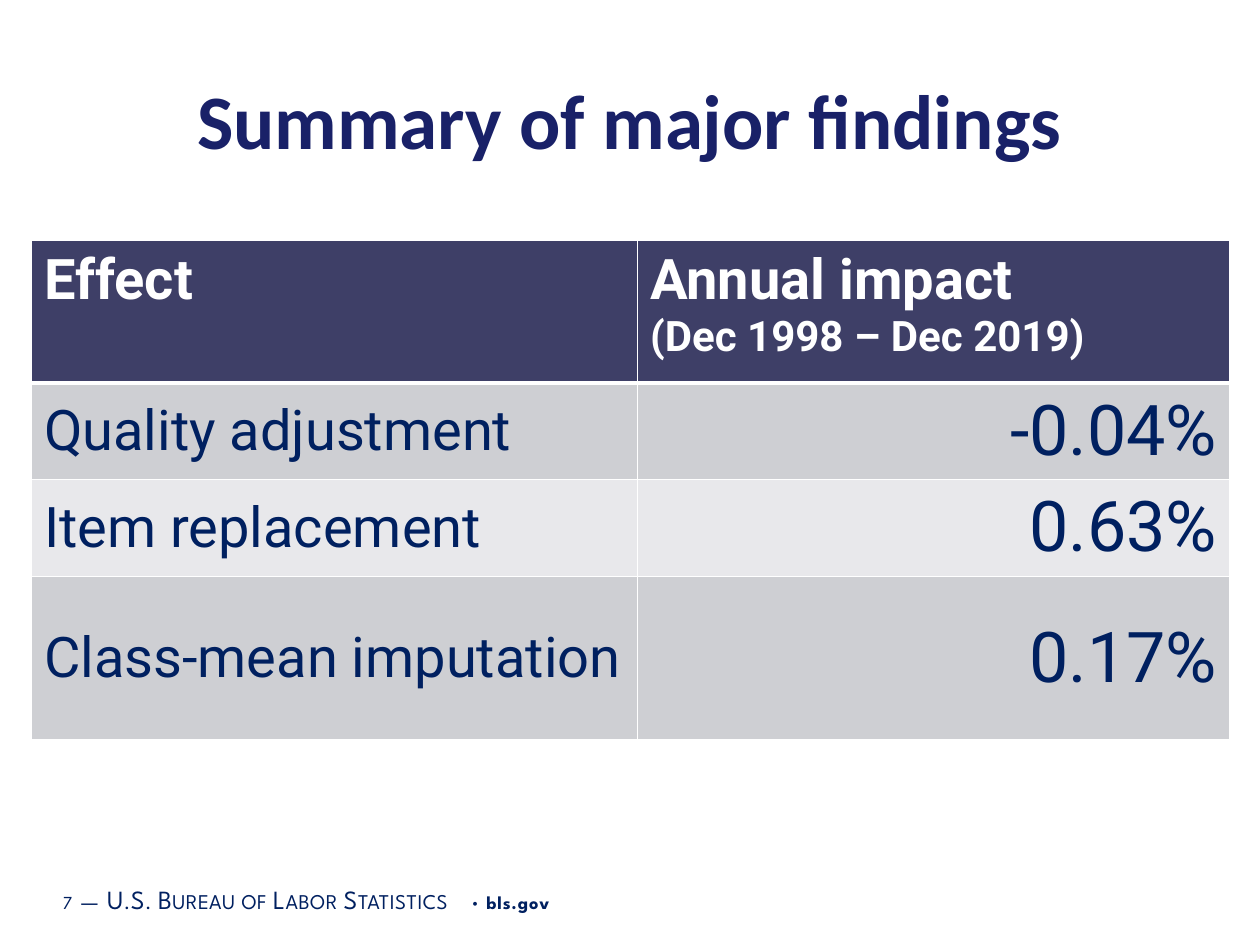
"""Build the slide that summarises the major findings."""
from lxml import etree
from pptx import Presentation
from pptx.dml.color import RGBColor
from pptx.enum.text import MSO_ANCHOR, PP_ALIGN
from pptx.oxml.ns import qn
from pptx.util import Inches, Pt

MIDDLE, TOP = MSO_ANCHOR.MIDDLE, MSO_ANCHOR.TOP
LEFT, CENTER, RIGHT = PP_ALIGN.LEFT, PP_ALIGN.CENTER, PP_ALIGN.RIGHT
COLORS = {
    "title": "192168",
    "text": "002060",
    "header": "3E3F67",
    "band_dark": "CECFD3",
    "band_light": "E8E8EB",
    "white": "FFFFFF",
}
FINDINGS = [
    ("Quality adjustment", "-0.04%", 0.7),
    ("Item replacement", "0.63%", 0.7),
    ("Class-mean imputation", "0.17%", 1.3),
]
FOOTER = [
    ("7", {"size": 10.5, "spacing": 50}),
    (" ", {"size": 16, "spacing": 50}),
    ("—", {"size": 15, "spacing": 30, "caps": True}),
    (" ", {"size": 16, "spacing": 50}),
    ("U.S. Bureau of Labor Statistics", {"size": 15, "spacing": 30, "caps": True}),
    (" • ", {"size": 10.5, "spacing": 50}),
    ("bls.gov", {"size": 10.5, "spacing": 50, "bold": True}),
]


def add_span(para, text, color, size, name, bold=False):
    """Append formatted text to a paragraph and return it."""
    span = para.add_run()
    span.text = text
    values = {"size": Pt(size), "name": name, "bold": bold}
    for attribute, value in values.items():
        setattr(span.font, attribute, value)
    span.font.color.rgb = RGBColor.from_string(COLORS[color])
    return span


def add_title(page, text):
    """Place and format the title placeholder."""
    title = page.shapes.title
    place = {"left": 0.5, "top": 0.5, "width": 9, "height": 0.88}
    for attribute, value in place.items():
        setattr(title, attribute, Inches(value))
    title.text_frame.vertical_anchor = MIDDLE
    para = title.text_frame.paragraphs[0]
    para.alignment = CENTER
    add_span(para, text, "title", 44, "Calibri", True)


def set_borders(cell, bottom):
    """Draw white borders around a cell, with the given bottom width."""
    properties = cell._tc.get_or_add_tcPr()
    widths = {"a:lnL": 1, "a:lnR": 1, "a:lnT": 1, "a:lnB": bottom}
    for tag, width in widths.items():
        line = etree.SubElement(properties, qn(tag), w=str(Pt(width)))
        fill = etree.SubElement(line, qn("a:solidFill"))
        etree.SubElement(fill, qn("a:srgbClr"), val=COLORS["white"])


def fill_cell(cell, lines, fill, color, align=LEFT, anchor=MIDDLE, bold=False, bottom=1):
    """Write lines of (text, size) in a cell with fill and borders."""
    set_borders(cell, bottom)
    cell.fill.solid()
    cell.fill.fore_color.rgb = RGBColor.from_string(COLORS[fill])
    cell.vertical_anchor = anchor
    frame = cell.text_frame
    for index, (text, size) in enumerate(lines):
        para = frame.add_paragraph() if index else frame.paragraphs[0]
        para.alignment = align
        add_span(para, text, color, size, "Roboto", bold)


def add_findings(page):
    """Add the table of effects and their annual impact."""
    heights = [1.13] + [height for _, _, height in FINDINGS]
    table = page.shapes.add_table(
        len(heights), 2, Inches(0.25), Inches(1.91), Inches(9.51), Inches(sum(heights))
    ).table
    for column, width in zip(table.columns, (4.81, 4.7)):
        column.width = Inches(width)
    for row, height in zip(table.rows, heights):
        row.height = Inches(height)
    headings = [
        [("Effect", 32)],
        [("Annual impact", 32), ("(Dec 1998 – Dec 2019)", 24)],
    ]
    for index, lines in enumerate(headings):
        fill_cell(table.cell(0, index), lines, "header", "white", anchor=TOP, bold=True, bottom=3)
    for index, (effect, impact, _) in enumerate(FINDINGS, 1):
        band = "band_dark" if index % 2 else "band_light"
        fill_cell(table.cell(index, 0), [(effect, 32)], band, "text")
        fill_cell(table.cell(index, 1), [(impact, 40)], band, "text", RIGHT)
    for index in range(2):
        top_line = table.cell(1, index)._tc.tcPr.find(qn("a:lnT"))
        top_line.set("w", str(Pt(3)))


def add_footer(page):
    """Add the page number and agency line."""
    box = page.shapes.add_textbox(Inches(0.43), Inches(6.93), Inches(6.33), Inches(0.4))
    frame = box.text_frame
    values = {
        "word_wrap": True,
        "vertical_anchor": MIDDLE,
        "margin_left": Inches(0.07),
        "margin_right": Inches(0.07),
        "margin_top": Inches(0.04),
        "margin_bottom": Inches(0.04),
    }
    for attribute, value in values.items():
        setattr(frame, attribute, value)
    for text, style in FOOTER:
        span = add_span(
            frame.paragraphs[0], text, "text", style["size"],
            "League Spartan", style.get("bold", False),
        )
        properties = span._r.get_or_add_rPr()
        properties.set("spc", str(style["spacing"]))
        if style.get("caps"):
            properties.set("cap", "small")


def main():
    """Build and save the deck."""
    deck = Presentation()
    deck.slide_width, deck.slide_height = Inches(10), Inches(7.5)
    page = deck.slides.add_slide(deck.slide_layouts[5])
    add_footer(page)
    add_title(page, "Summary of major findings")
    add_findings(page)
    deck.save("out.pptx")


if __name__ == "__main__":
    main()
